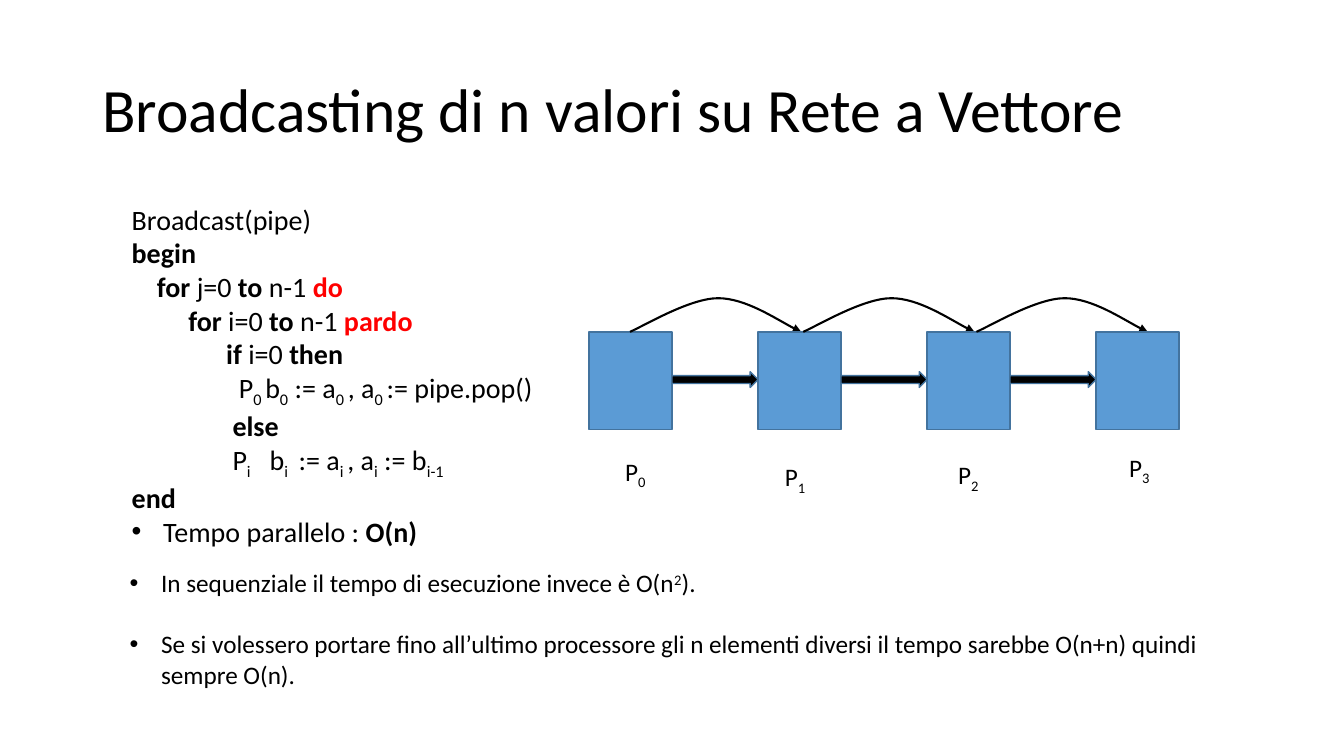
from dataclasses import dataclass

from lxml import etree
from pptx import Presentation
from pptx.dml.color import RGBColor
from pptx.enum.shapes import MSO_SHAPE
from pptx.enum.text import MSO_ANCHOR
from pptx.oxml.ns import qn
from pptx.util import Pt

RECTANGLE, RIGHT_ARROW = MSO_SHAPE.RECTANGLE, MSO_SHAPE.RIGHT_ARROW
TOP, MIDDLE = MSO_ANCHOR.TOP, MSO_ANCHOR.MIDDLE

EMU_PER_PX = 9525
BLACK, RED, BLUE, DARK_BLUE = "000000", "FF0000", "5B9BD5", "43739E"
FONT = "Calibri"
BULLET_INDENT = 30

# XML attributes of a run for each way of writing
PLAIN = {}
BOLD = {"b": "1"}
SUB = {"baseline": "-25000"}
SUP = {"baseline": "30000"}
WIDE = {"spc": "900"}
LOOSE = {"spc": "300"}


@dataclass(frozen=True)
class Run:
    text: str
    marks: dict
    color: str = BLACK


@dataclass(frozen=True)
class Line:
    runs: list[Run]
    indent: int = 0
    bullet: bool = False
    space_before: int = 0
    line_spacing: float = 1.0


@dataclass(frozen=True)
class Box:
    left: int
    top: int
    width: int
    height: int


def plain(text: str) -> Run:
    return Run(text, PLAIN)


def bold(text: str, color: str = BLACK) -> Run:
    return Run(text, BOLD, color)


def indexed(name: str, index: str) -> list[Run]:
    return [plain(name), Run(index, SUB)]


TITLE = [Line([plain("Broadcasting di n valori su Rete a Vettore")], line_spacing=0.9)]

ALGORITHM = [
    Line([plain("Broadcast(pipe)")]),
    Line([bold("begin")]),
    Line([bold("for "), plain("j=0 "), bold("to "), plain("n-1 "), bold("do", RED)], 24),
    Line([bold("for"), plain(" i=0 "), bold("to"), plain(" n-1 "), bold("pardo", RED)], 54),
    Line([bold("if "), plain("i=0 "), bold("then")], 90),
    Line([*indexed("P", "0 "), *indexed("b", "0"), *indexed(" := a", "0 "),
          *indexed(", a", "0 "), plain(":= pipe.pop()")], 102),
    Line([bold("else")], 96),
    Line([*indexed("P", "i"), Run(" ", WIDE), *indexed("b", "i"), Run(" ", LOOSE),
          *indexed(":= a", "i "), *indexed(", a", "i"), *indexed(" := b", "i-1")], 96),
    Line([bold("end")]),
    Line([plain("Tempo parallelo : "), bold("O(n)")], bullet=True),
]

REMARKS = [
    Line([plain("In sequenziale il tempo di esecuzione invece è O(n"), Run("2", SUP),
          plain(").")], bullet=True),
    Line([plain("Se si volessero portare fino all’ultimo processore gli n elementi diversi "
                "il tempo sarebbe O(n+n) quindi sempre O(n).")], bullet=True, space_before=22),
]

FIRST_PROCESSOR = Box(561, 316, 79, 93)
PROCESSOR_PITCH = 161
LABEL_CORNERS = [(586, 430), (738, 435), (903, 433), (1066, 426)]
LINK_TOP, LINK_HEIGHT = 354, 15
ARC_LEFT, ARC_TOP, ARC_PITCH = 600, 284, 165
# Start point, then two control points and an end point for each curve
ARC_POINTS = [(0, 32), (14, 26), (57, 0), (84, 0), (110, 0), (147, 25), (163, 32)]


def px(length: int) -> int:
    return length * EMU_PER_PX


def rgb(color: str) -> RGBColor:
    return RGBColor.from_string(color)


def place(box: Box) -> tuple[int, int, int, int]:
    return px(box.left), px(box.top), px(box.width), px(box.height)


def add_bullet(paragraph) -> None:
    properties = paragraph._p.get_or_add_pPr()
    properties.set("marL", str(px(BULLET_INDENT)))
    properties.set("indent", str(-px(BULLET_INDENT)))
    etree.SubElement(properties, qn("a:buFont")).set("typeface", "Arial")
    etree.SubElement(properties, qn("a:buChar")).set("char", "•")


def write_line(paragraph, line: Line, size: int) -> None:
    paragraph.line_spacing = line.line_spacing
    paragraph.space_before = Pt(line.space_before)
    if line.indent:
        paragraph._p.get_or_add_pPr().set("marL", str(px(line.indent)))
    if line.bullet:
        add_bullet(paragraph)
    for part in line.runs:
        run = paragraph.add_run()
        run.text = part.text
        for name, value in {"name": FONT, "size": Pt(size)}.items():
            setattr(run.font, name, value)
        run.font.color.rgb = rgb(part.color)
        for mark, value in part.marks.items():
            run._r.get_or_add_rPr().set(mark, value)


def add_text(slide, box: Box, lines: list[Line], size: int, anchor=TOP) -> None:
    frame = slide.shapes.add_textbox(*place(box)).text_frame
    for name, value in {"word_wrap": True, "vertical_anchor": anchor}.items():
        setattr(frame, name, value)
    for number, line in enumerate(lines):
        paragraph = frame.add_paragraph() if number else frame.paragraphs[0]
        write_line(paragraph, line, size)


def add_filled(slide, preset, box: Box, fill: str) -> None:
    shape = slide.shapes.add_shape(preset, *place(box))
    shape.shadow.inherit = False
    shape.fill.solid()
    shape.fill.fore_color.rgb = rgb(fill)
    shape.line.color.rgb = rgb(DARK_BLUE)
    shape.line.width = Pt(1)


def add_arc(slide, left: int) -> None:
    """Draw a curved arrow, turning each three line steps into one Bézier curve."""
    start, *steps = [(left + x, ARC_TOP + y) for x, y in ARC_POINTS]
    builder = slide.shapes.build_freeform(*start, scale=EMU_PER_PX)
    builder.add_line_segments(steps, close=False)
    arc = builder.convert_to_shape()
    segments = list(arc._element.iter(qn("a:lnTo")))
    for first in range(0, len(segments), 3):
        curve = etree.SubElement(segments[first].getparent(), qn("a:cubicBezTo"))
        for segment in segments[first:first + 3]:
            curve.append(segment[0])
            segment.getparent().remove(segment)
    arc.shadow.inherit = False
    arc.fill.background()
    arc.line.color.rgb = rgb(BLACK)
    arc.line.width = Pt(1.5)
    etree.SubElement(arc.line._get_or_add_ln(), qn("a:tailEnd")).set("type", "triangle")


def add_network(slide) -> None:
    first = FIRST_PROCESSOR
    last = len(LABEL_CORNERS) - 1
    for index, (label_left, label_top) in enumerate(LABEL_CORNERS):
        left = first.left + index * PROCESSOR_PITCH
        add_filled(slide, RECTANGLE, Box(left, first.top, first.width, first.height), BLUE)
        add_text(slide, Box(label_left, label_top, 54, 38),
                 [Line(indexed("P", str(index)))], 18)
        if index < last:
            link = Box(left + first.width, LINK_TOP, PROCESSOR_PITCH - first.width, LINK_HEIGHT)
            add_filled(slide, RIGHT_ARROW, link, BLACK)
            add_arc(slide, ARC_LEFT + index * ARC_PITCH)


def main() -> None:
    presentation = Presentation()
    presentation.slide_width, presentation.slide_height = px(1280), px(720)
    slide = presentation.slides.add_slide(presentation.slide_layouts[6])
    add_text(slide, Box(88, 38, 1104, 139), TITLE, 44, MIDDLE)
    add_text(slide, Box(116, 188, 434, 345), ALGORITHM, 20)
    add_network(slide)
    add_text(slide, Box(114, 536, 1050, 126), REMARKS, 18)
    presentation.save("out.pptx")


if __name__ == "__main__":
    main()
